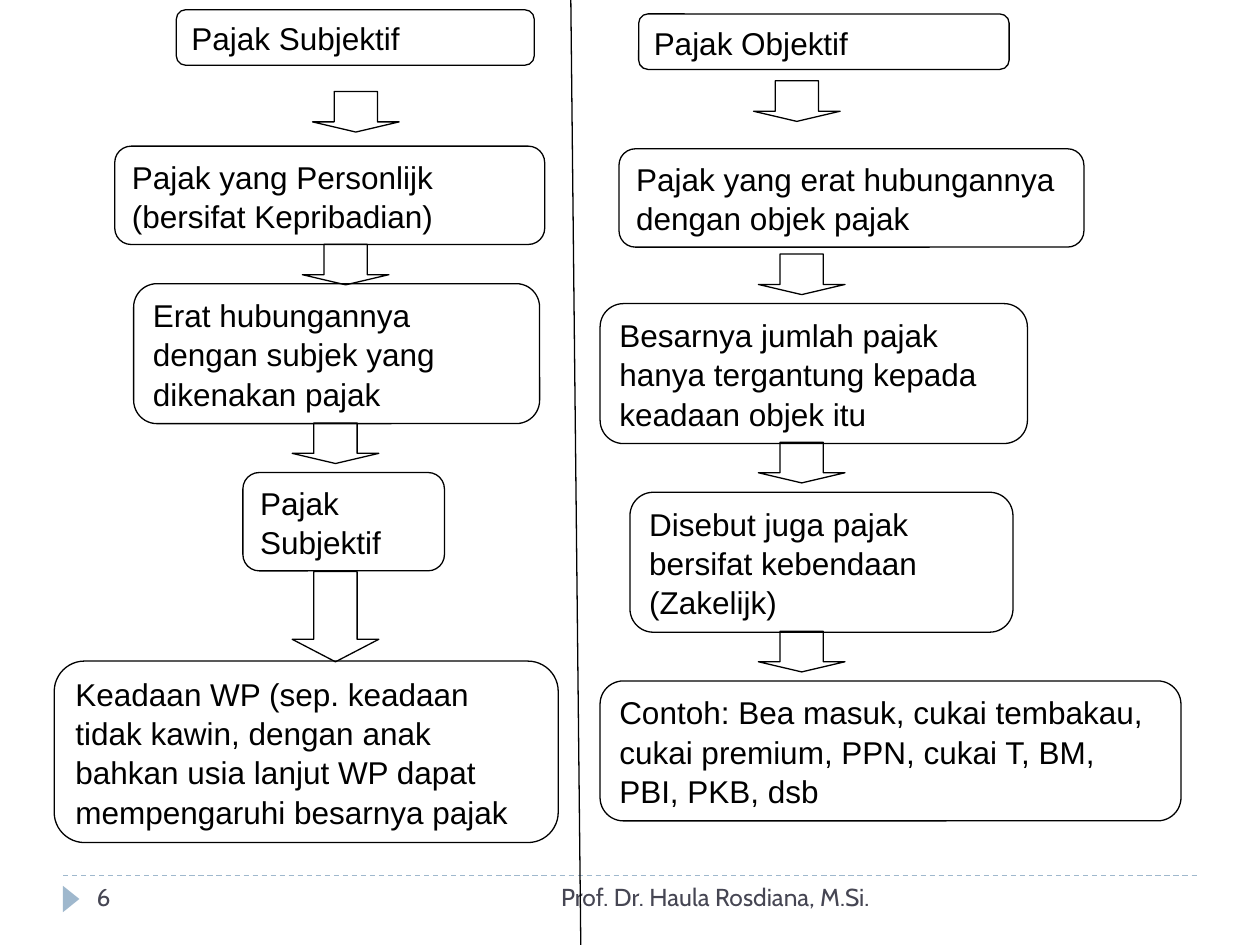
from lxml import etree
from pptx import Presentation
from pptx.dml.color import RGBColor
from pptx.enum.dml import MSO_LINE
from pptx.enum.shapes import MSO_CONNECTOR, MSO_SHAPE
from pptx.enum.text import MSO_ANCHOR, PP_ALIGN
from pptx.oxml.ns import qn
from pptx.util import Pt

ROUNDED = MSO_SHAPE.ROUNDED_RECTANGLE
DOWN_ARROW = MSO_SHAPE.DOWN_ARROW
TRIANGLE = MSO_SHAPE.ISOSCELES_TRIANGLE
STRAIGHT = MSO_CONNECTOR.STRAIGHT
DASH = MSO_LINE.DASH
TOP, MIDDLE = MSO_ANCHOR.TOP, MSO_ANCHOR.MIDDLE
LEFT, RIGHT = PP_ALIGN.LEFT, PP_ALIGN.RIGHT

COLORS = {"ink": "000000", "accent": "9FB8CD", "footer": "464653"}
BODY = {"name": "Arial", "size": Pt(18)}
FOOTER = {"name": "Cabin", "size": Pt(14)}

# Box height by number of text lines
BOX_HEIGHTS = {1: 31.7, 2: 56.2, 3: 80, 4: 103.7}
ARROW_WIDTH, ARROW_HEIGHT = 49.5, 23.2

# Boxes: left, top, width, lines, text
SUBJECTIVE_BOXES = [
    (100.8, 5.6, 204.5, 1, "Pajak Subjektif"),
    (65.6, 83.5, 245.7, 2, "Pajak yang Personlijk (bersifat Kepribadian)"),
    (76.4, 162.1, 232, 3, "Erat hubungannya dengan subjek yang dikenakan pajak"),
    (138.8, 270, 115.2, 2, "Pajak Subjektif"),
    (31, 377.8, 288, 4, "Keadaan WP (sep. keadaan tidak kawin, dengan anak "
                        "bahkan usia lanjut WP dapat mempengaruhi besarnya pajak"),
]
OBJECTIVE_BOXES = [
    (365, 8, 211.7, 1, "Pajak Objektif"),
    (353.7, 85, 265.7, 2, "Pajak yang erat hubungannya dengan objek pajak"),
    (342.9, 173.5, 244.2, 3,
     "Besarnya jumlah pajak hanya tergantung kepada keadaan objek itu"),
    (360, 281.3, 218.9, 3, "Disebut juga pajak bersifat kebendaan (Zakelijk)"),
    (342.9, 389.1, 332, 3, "Contoh: Bea masuk, cukai tembakau, cukai premium, "
                           "PPN, cukai T, BM, PBI, PKB, dsb"),
]

# Short arrows: left, top
ARROWS = [
    (178.6, 52.3), (172.8, 139.6), (167, 241.7),
    (430.6, 46.2), (433.4, 145.2), (433.4, 252.8), (433.4, 360.8),
]


class SlideBuilder:
    def __init__(self, slide, line_width=0.75):
        self.slide = slide
        self.line_width = Pt(line_width)

    def color(self, name):
        return RGBColor.from_string(COLORS[name])

    def add_text(self, shape, text, font, color, align=LEFT, anchor=TOP, spacing=1):
        frame = shape.text_frame
        frame.word_wrap = True
        frame.vertical_anchor = anchor
        paragraph = frame.paragraphs[0]
        paragraph.alignment = align
        paragraph.line_spacing = spacing
        run = paragraph.add_run()
        run.text = text
        for attribute, value in font.items():
            setattr(run.font, attribute, value)
        run.font.color.rgb = self.color(color)

    def outline(self, kind, left, top, width, height, adjustments):
        shape = self.slide.shapes.add_shape(
            kind, Pt(left), Pt(top), Pt(width), Pt(height))
        shape.shadow.inherit = False
        shape.fill.background()
        shape.line.color.rgb = self.color("ink")
        shape.line.width = self.line_width
        for index, value in enumerate(adjustments):
            shape.adjustments[index] = value
        return shape

    def box(self, left, top, width, lines, text):
        shape = self.outline(ROUNDED, left, top, width, BOX_HEIGHTS[lines], [0.167])
        self.add_text(shape, text, BODY, "ink", anchor=MIDDLE, spacing=1.04)

    def arrow(self, left, top, height=ARROW_HEIGHT, head=0.25):
        self.outline(DOWN_ARROW, left, top, ARROW_WIDTH, height, [0.5, head])

    def marker(self, left, top, width, height):
        shape = self.outline(TRIANGLE, left, top, width, height, [0.5])
        shape.rotation = 90
        shape.fill.solid()
        shape.fill.fore_color.rgb = self.color("accent")
        shape.line.fill.background()

    def line(self, start, end, color, dash=None):
        points = [Pt(value) for value in (*start, *end)]
        connector = self.slide.shapes.add_connector(STRAIGHT, *points)
        connector.line.color.rgb = self.color(color)
        connector.line.width = self.line_width
        connector.line.dash_style = dash
        properties = connector._element.spPr
        etree.SubElement(properties, qn("a:effectLst"))

    def footer_text(self, left, width, text, align=LEFT):
        shape = self.slide.shapes.add_textbox(
            Pt(left), Pt(500.4), Pt(width), Pt(28.8))
        self.add_text(shape, text, FOOTER, "footer", align)


def main():
    presentation = Presentation()
    presentation.slide_width = Pt(720)
    presentation.slide_height = Pt(540)
    slide = presentation.slides.add_slide(presentation.slide_layouts[6])
    builder = SlideBuilder(slide)

    # Footer
    builder.line((36, 500.4), (684, 500.4), "accent", DASH)
    builder.marker(33.1, 509, 15.1, 9.4)
    builder.footer_text(228.2, 275.8, "Prof. Dr. Haula Rosdiana, M.Si.", RIGHT)
    builder.footer_text(48.2, 156.2, "6")

    # Two columns of boxes and the divider between them
    for box in SUBJECTIVE_BOXES + OBJECTIVE_BOXES:
        builder.box(*box)
    builder.line((326.2, 0), (331.9, 540), "ink")

    # Flow arrows, the last one longer
    for left, top in ARROWS:
        builder.arrow(left, top)
    builder.arrow(167, 326.6, height=51.6, head=0.26)

    presentation.save("out.pptx")


if __name__ == "__main__":
    main()
